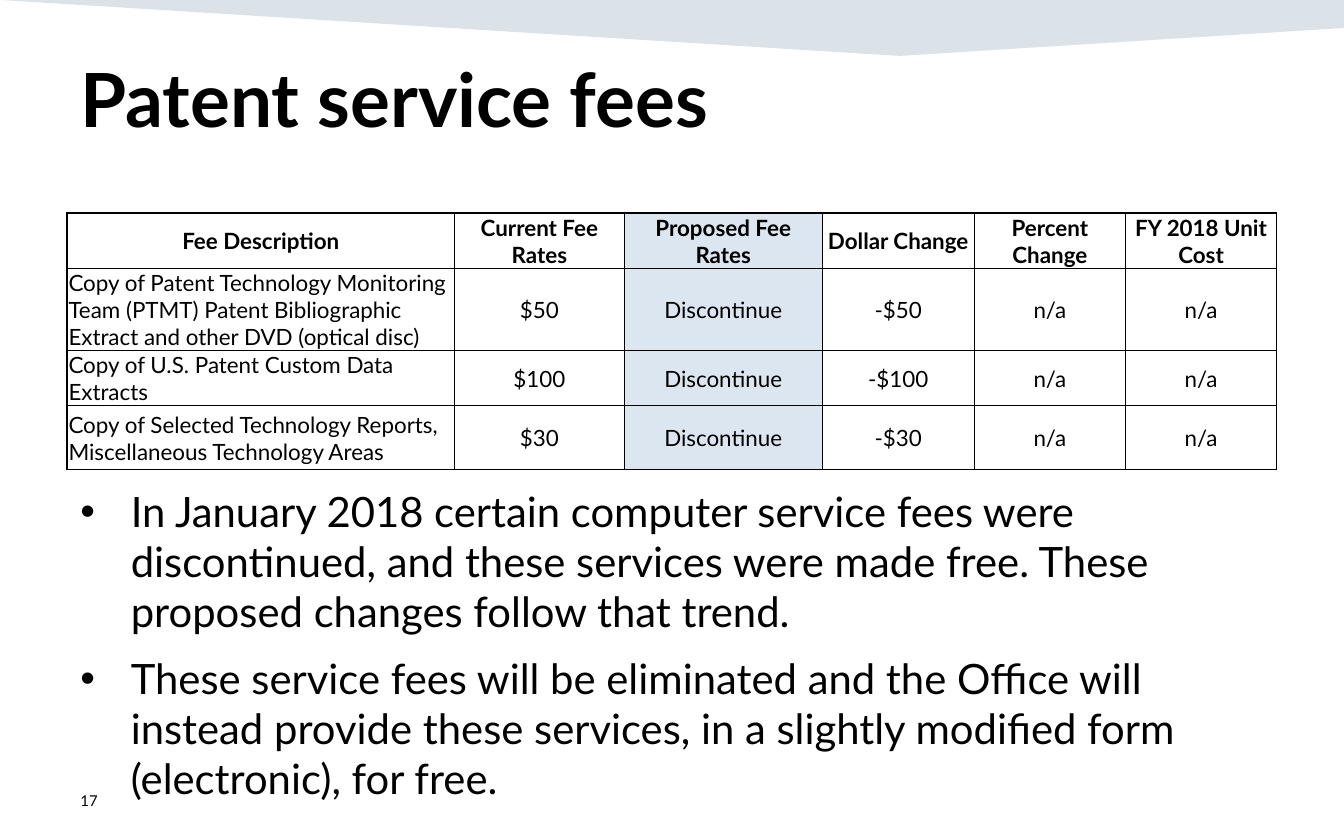
"""Build the patent service fees slide."""
from lxml import etree
from pptx import Presentation
from pptx import util as u
from pptx.dml.color import RGBColor
from pptx.enum import text as t
from pptx.oxml import ns

COLORS = {"black": "000000", "white": "FFFFFF", "highlight": "DCE6F1", "band": "164469"}
FONT = "Lato"
COLUMN_WIDTHS = [207.5, 91, 106, 81.5, 81, 81]
ROW_HEIGHTS = [29.5, 44, 29.5, 34.5]
HEADERS = ["Fee Description", "Current Fee Rates", "Proposed Fee Rates",
           "Dollar Change", "Percent Change", "FY 2018 Unit Cost"]
FEES = [
    ("Copy of Patent Technology Monitoring Team (PTMT) Patent Bibliographic "
     "Extract and other DVD (optical disc)", "$50"),
    ("Copy of U.S. Patent Custom Data Extracts", "$100"),
    ("Copy of Selected Technology Reports, Miscellaneous Technology Areas", "$30"),
]
BULLETS = [
    "In January 2018 certain computer service fees were discontinued, and these "
    "services were made free. These proposed changes follow that trend.",
    "These service fees will be eliminated and the Office will instead provide "
    "these services, in a slightly modified form (electronic), for free.",
]


def color(name):
    return RGBColor.from_string(COLORS[name])


def add_xml(parent, tag, **attributes):
    return etree.SubElement(parent, ns.qn(tag), attributes)


def write(frame, lines, size, bold=False, align=t.PP_ALIGN.LEFT,
          anchor=t.MSO_ANCHOR.TOP, bullet=False, gap=0):
    """Write a string or a list of paragraphs into a text frame."""
    frame.word_wrap = True
    frame.vertical_anchor = anchor
    lines = [lines] if isinstance(lines, str) else lines
    for index, line in enumerate(lines):
        paragraph = frame.paragraphs[0] if index == 0 else frame.add_paragraph()
        if bullet:
            properties = paragraph._p.get_or_add_pPr()
            properties.set("marL", str(u.Pt(27)))
            properties.set("indent", str(-u.Pt(27)))
            add_xml(properties, "a:buFont", typeface="Arial")
            add_xml(properties, "a:buChar", char="•")
        paragraph.alignment = align
        paragraph.space_before = u.Pt(gap if index else 0)
        run = paragraph.add_run()
        run.text = line
        run.font.name = FONT
        run.font.size = u.Pt(size)
        run.font.bold = bold
        run.font.color.rgb = color("black")


class SlideBuilder:
    """Hold the current slide and add its elements."""

    def __init__(self, slide):
        self.slide = slide

    def band(self, points, opacity):
        builder = self.slide.shapes.build_freeform(*points[0], scale=u.Pt(1))
        builder.add_line_segments(points[1:], close=True)
        shape = builder.convert_to_shape()
        shape.shadow.inherit = False
        shape.line.fill.background()
        shape.fill.solid()
        shape.fill.fore_color.rgb = color("band")
        fill_color = shape._element.spPr.find(".//" + ns.qn("a:srgbClr"))
        add_xml(fill_color, "a:alpha", val=str(opacity * 1000))

    def title(self, words, left, top, width, height, **style):
        shape = self.slide.shapes.title
        shape.left, shape.top = u.Pt(left), u.Pt(top)
        shape.width, shape.height = u.Pt(width), u.Pt(height)
        shape.text_frame.auto_size = t.MSO_AUTO_SIZE.NONE
        write(shape.text_frame, words, **style)

    def text(self, words, left, top, width, height, **style):
        shape = self.slide.shapes.add_textbox(*map(u.Pt, (left, top, width, height)))
        write(shape.text_frame, words, **style)

    def border(self, cell, side, width):
        properties = cell._tc.get_or_add_tcPr()
        line = add_xml(properties, "a:ln" + side, w=str(u.Pt(width)))
        fill = add_xml(line, "a:solidFill")
        add_xml(fill, "a:srgbClr", val=COLORS["black"])

    def table(self, rows, left, top, widths, heights, highlight):
        frame = self.slide.shapes.add_table(
            len(rows), len(widths),
            *map(u.Pt, (left, top, sum(widths), sum(heights))))
        table = frame.table
        table.first_row = table.horz_banding = False
        for column, width in zip(table.columns, widths):
            column.width = u.Pt(width)
        for y, (values, height) in enumerate(zip(rows, heights)):
            table.rows[y].height = u.Pt(height)
            for x, value in enumerate(values):
                cell = table.cell(y, x)
                cell.margin_left = cell.margin_right = cell.margin_top = u.Pt(0.72)
                cell.margin_bottom = 0
                for side in "LRTB":
                    outer = (side == "L" and x == 0) or (side == "T" and y == 0)
                    self.border(cell, side, 1 if outer else 0.5)
                cell.fill.solid()
                cell.fill.fore_color.rgb = color("highlight" if x == highlight else "white")
                centered = y == 0 or x > 0
                write(cell.text_frame, value, 12, bold=y == 0,
                      align=t.PP_ALIGN.CENTER if centered else t.PP_ALIGN.LEFT)
                cell.vertical_anchor = t.MSO_ANCHOR.MIDDLE


def main():
    presentation = Presentation()
    presentation.slide_width, presentation.slide_height = u.Pt(720), u.Pt(450)
    slide = presentation.slides.add_slide(presentation.slide_layouts[5])
    builder = SlideBuilder(slide)
    builder.band([(0, 0), (720, 0), (720, 15), (481.5, 29.5)], opacity=15)
    builder.title("Patent service fees", 36, 24.5, 648, 75, size=40, bold=True)
    builder.text(BULLETS, 36, 256.5, 648, 155.5, size=22.4, bullet=True, gap=9)
    builder.text("17", 36, 417, 162, 24, size=8, anchor=t.MSO_ANCHOR.MIDDLE)
    rows = [HEADERS] + [[name, fee, "Discontinue", "-" + fee, "n/a", "n/a"]
                        for name, fee in FEES]
    builder.table(rows, 36, 114, COLUMN_WIDTHS, ROW_HEIGHTS, highlight=2)
    presentation.save("out.pptx")


if __name__ == "__main__":
    main()
